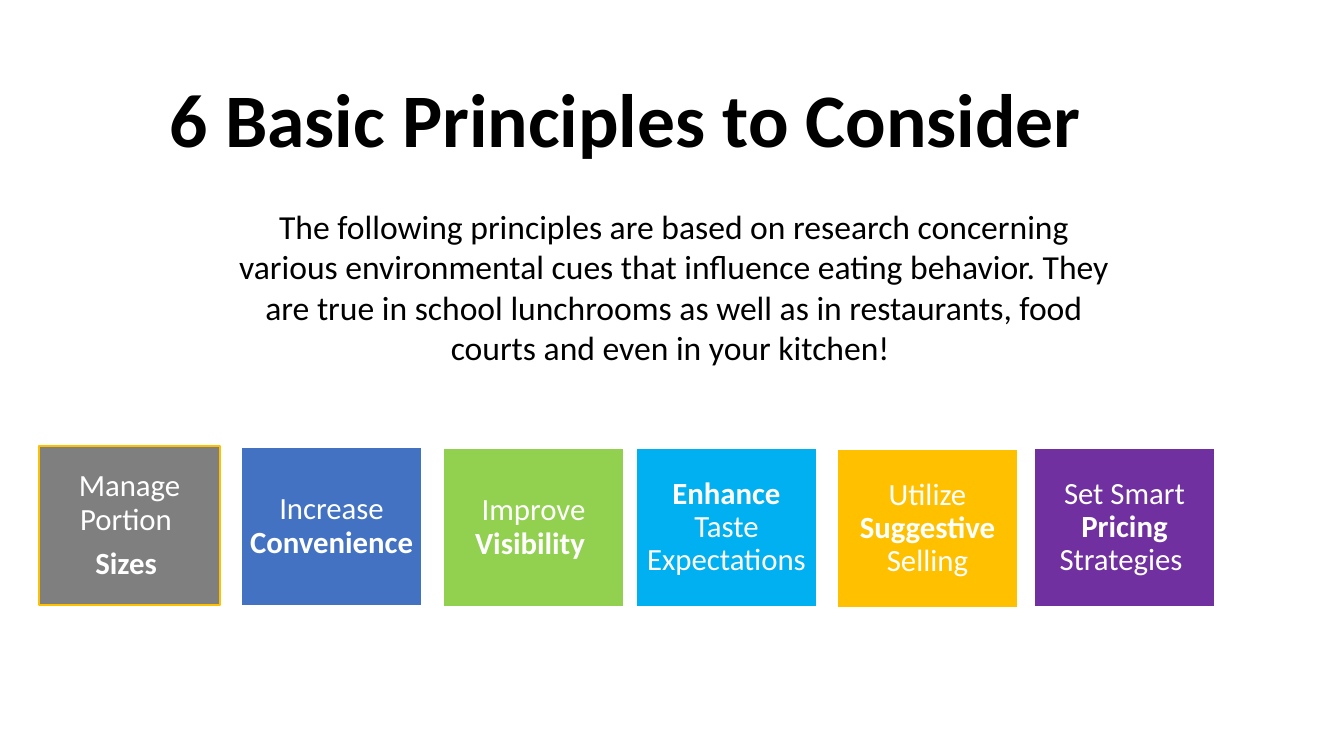
from pptx import Presentation
from pptx.dml.color import RGBColor
from pptx.enum.shapes import MSO_SHAPE
from pptx.enum.text import MSO_ANCHOR, MSO_AUTO_SIZE, PP_ALIGN
from pptx.util import Pt

SCALE = 914400 / 100.8
COLORS = {
    "black": "000000", "white": "FFFFFF", "gray": "7F7F7F", "blue": "4372C3",
    "green": "92D050", "sky": "00B0F0", "gold": "FFC000", "purple": "7030A0",
}
TITLE = "6 Basic Principles to Consider "
INTRO = (
    "The following principles are based on research concerning various "
    "environmental cues that influence eating behavior. They are true in school "
    "lunchrooms as well as in restaurants, food courts and even in your kitchen! "
)
PRINCIPLES = [
    (39, 446, "gray", "gold", [[("Manage Portion ", False)], [("Sizes ", True)]]),
    (241, 447, "blue", "white", [[("Increase ", False), ("Convenience ", True)]]),
    (443, 448, "green", "white", [[("Improve ", False), ("Visibility ", True)]]),
    (636, 448, "sky", "white", [[("Enhance ", True), ("Taste Expectations", False)]]),
    (837, 449, "gold", "white",
     [[("Utilize ", False), ("Suggestive", True), (" Selling", False)]]),
    (1034, 448, "purple", "white",
     [[("Set Smart ", False), ("Pricing ", True), ("Strategies ", False)]]),
]


def px(length):
    return round(length * SCALE)


def color(name):
    return RGBColor.from_string(COLORS[name])


def apply(target, values):
    for name, value in values.items():
        setattr(target, name, value)


class PrinciplesSlide:
    """Draws titles, text and principle cards on one slide."""

    def __init__(self, presentation, font_name="Calibri"):
        self.font_name = font_name
        self.slide = presentation.slides.add_slide(presentation.slide_layouts[5])

    def fill_text(self, shape, paragraphs, size, ink, anchor, inset, spacing, gap=0):
        frame = shape.text_frame
        apply(frame, {
            "word_wrap": True, "auto_size": MSO_AUTO_SIZE.NONE,
            "vertical_anchor": anchor,
            "margin_left": px(inset[0]), "margin_right": px(inset[0]),
            "margin_top": px(inset[1]), "margin_bottom": px(inset[1]),
        })
        for index, runs in enumerate(paragraphs):
            paragraph = frame.add_paragraph() if index else frame.paragraphs[0]
            apply(paragraph, {
                "alignment": PP_ALIGN.CENTER, "line_spacing": spacing,
                "space_before": Pt(gap if index else 0),
            })
            for text, bold in runs:
                run = paragraph.add_run()
                run.text = text
                apply(run.font, {"name": self.font_name, "size": Pt(size), "bold": bold})
                run.font.color.rgb = color(ink)

    def title(self, text, left, top, width, height):
        shape = self.slide.shapes.title
        apply(shape, {"left": px(left), "top": px(top),
                      "width": px(width), "height": px(height)})
        self.fill_text(shape, [[(text, True)]], 54, "black", MSO_ANCHOR.TOP, (10, 5), 1.0)

    def text(self, text, left, top, width, height):
        shape = self.slide.shapes.add_textbox(px(left), px(top), px(width), px(height))
        self.fill_text(shape, [[(text, False)]], 24, "black", MSO_ANCHOR.TOP, (10, 5), 1.0)

    def card(self, left, top, fill, outline, paragraphs, width=181, height=159):
        shape = self.slide.shapes.add_shape(
            MSO_SHAPE.RECTANGLE, px(left), px(top), px(width), px(height))
        shape.shadow.inherit = False
        shape.fill.solid()
        shape.fill.fore_color.rgb = color(fill)
        shape.line.color.rgb = color(outline)
        shape.line.width = Pt(1)
        self.fill_text(shape, paragraphs, 22, "white", MSO_ANCHOR.MIDDLE, (8, 8), 0.9, 7.7)


def main():
    presentation = Presentation()
    apply(presentation, {"slide_width": px(1344), "slide_height": px(756)})
    page = PrinciplesSlide(presentation)
    page.title(TITLE, 134, 67, 1001, 102)
    page.text(INTRO, 222, 201, 904, 173)
    for principle in PRINCIPLES:
        page.card(*principle)
    presentation.save("out.pptx")


if __name__ == "__main__":
    main()
